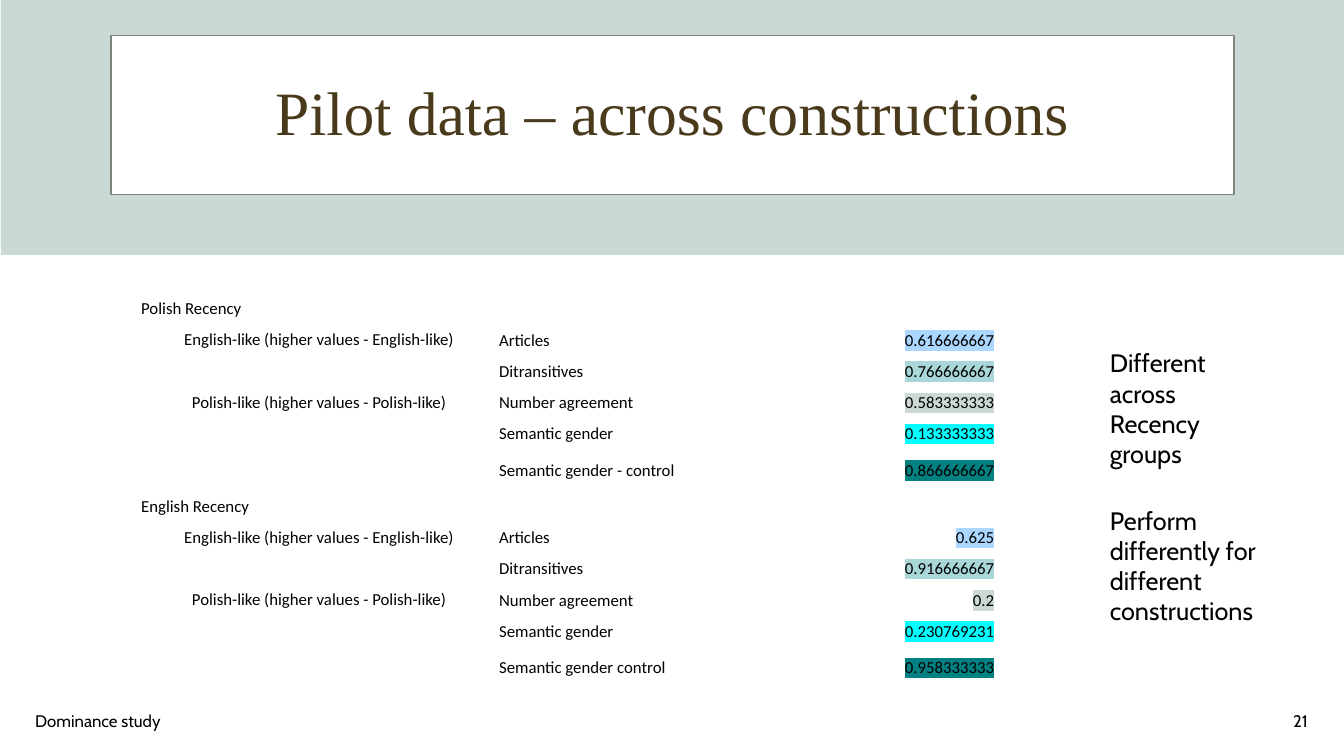
from lxml.etree import SubElement
from pptx import Presentation
from pptx.dml.color import RGBColor
from pptx.enum.shapes import MSO_SHAPE as Shape
from pptx.enum.text import MSO_ANCHOR as Anchor, PP_ALIGN as Align
from pptx.oxml import parse_xml
from pptx.oxml.ns import nsdecls, qn
from pptx.util import Inches, Pt

COLORS = {
    "band": "CAD8D6", "white": "FFFFFF", "frame": "7E8679", "title": "4A3A1C", "text": "000000",
    "articles": "AAD6FF", "ditransitives": "A9D7D9", "number": "CCD8D6",
    "gender": "00FFFF", "control": "008080",
}
HIGHLIGHTS = ["articles", "ditransitives", "number", "gender", "control"]
CONSTRUCTIONS = ["Articles", "Ditransitives", "Number agreement", "Semantic gender"]
LABELS = {
    1: "English-like (higher values - English-like)",
    3: "Polish-like (higher values - Polish-like)",
}
GROUPS = [
    ("Polish Recency", "Semantic gender - control",
     ["0.616666667", "0.766666667", "0.583333333", "0.133333333", "0.866666667"]),
    ("English Recency", "Semantic gender control",
     ["0.625", "0.916666667", "0.2", "0.230769231", "0.958333333"]),
]
COLUMN_WIDTHS = [3.55, 3.18, 1.75]
ROW_HEIGHTS = [0.36, 0.31, 0.31, 0.31, 0.31, 0.36]


class SlideBuilder:
    """Draws styled elements on one slide."""

    def __init__(self, slide):
        self.slide = slide
        self.body_font = "Cabin"
        self.table_font = "Calibri"
        self.title_font = "Times New Roman"

    def color(self, name):
        return RGBColor.from_string(COLORS[name])

    def rectangle(self, left, top, width, height, fill, line=None):
        shape = self.slide.shapes.add_shape(
            Shape.RECTANGLE, Inches(left), Inches(top), Inches(width), Inches(height))
        shape.shadow.inherit = False
        shape.fill.solid()
        shape.fill.fore_color.rgb = self.color(fill)
        if line:
            shape.line.color.rgb = self.color(line)
            shape.line.width = Pt(1)
        else:
            shape.line.fill.background()

    def run(self, paragraph, text, size, font, color="text", highlight=None):
        run = paragraph.add_run()
        run.text = text
        run.font.size = Pt(size)
        run.font.name = font
        run.font.color.rgb = self.color(color)
        if highlight:
            fill = run.font._element.find(qn("a:solidFill"))
            fill.addnext(parse_xml(
                f'<a:highlight {nsdecls("a")}><a:srgbClr val="{COLORS[highlight]}"/></a:highlight>'))

    def text(self, left, top, width, height, text, size, font=None, color="text",
             align=Align.LEFT, anchor=Anchor.TOP, line_spacing=None):
        box = self.slide.shapes.add_textbox(
            Inches(left), Inches(top), Inches(width), Inches(height))
        frame = box.text_frame
        frame.word_wrap = True
        frame.vertical_anchor = anchor
        paragraph = frame.paragraphs[0]
        paragraph.alignment = align
        paragraph.line_spacing = line_spacing
        self.run(paragraph, text, size, font or self.body_font, color)

    def cell(self, cell, text, align=Align.LEFT, highlight=None):
        cell.vertical_anchor = Anchor.BOTTOM
        cell.margin_left = cell.margin_top = cell.margin_right = Inches(0.01)
        cell.margin_bottom = Inches(0.05)
        paragraph = cell.text_frame.paragraphs[0]
        paragraph.alignment = align
        if text:
            self.run(paragraph, text, 12, self.table_font, highlight=highlight)
        else:
            SubElement(paragraph._p, qn("a:endParaRPr"), sz="1200")

    def label(self, table, row, text):
        cell = table.cell(row, 0)
        cell.merge(table.cell(row + 1, 0))
        self.cell(cell, text, Align.CENTER)
        cell.vertical_anchor = Anchor.TOP
        cell.margin_left = cell.margin_right = Inches(0.1)
        cell.margin_top = Inches(0.05)

    def results_table(self, left, top):
        heights = ROW_HEIGHTS * len(GROUPS)
        table = self.slide.shapes.add_table(
            len(heights), len(COLUMN_WIDTHS), Inches(left), Inches(top),
            Inches(sum(COLUMN_WIDTHS)), Inches(sum(heights))).table
        table.first_row = table.horz_banding = False
        for column, width in zip(table.columns, COLUMN_WIDTHS):
            column.width = Inches(width)
        for row, height in zip(table.rows, heights):
            row.height = Inches(height)
        for cell in table.iter_cells():
            cell.fill.background()
        for index, (group, control, values) in enumerate(GROUPS):
            first = index * len(ROW_HEIGHTS)
            names = ["", *CONSTRUCTIONS, control]
            highlights = [None, *HIGHLIGHTS]
            for offset, (name, value) in enumerate(zip(names, ["", *values])):
                row = first + offset
                if offset in LABELS:
                    self.label(table, row, LABELS[offset])
                else:
                    self.cell(table.cell(row, 0), "" if offset else group)
                self.cell(table.cell(row, 1), name)
                self.cell(table.cell(row, 2), value, Align.RIGHT, highlights[offset])


def main():
    presentation = Presentation()
    presentation.slide_width = Inches(13.33)
    presentation.slide_height = Inches(7.5)
    builder = SlideBuilder(presentation.slides.add_slide(presentation.slide_layouts[6]))

    builder.rectangle(0.01, 0, 13.32, 2.53, "band")
    builder.rectangle(1.1, 0.35, 11.14, 1.58, "white", "frame")
    builder.text(0.42, 0.42, 12.5, 1.45, "Pilot data – across constructions", 44,
                 builder.title_font, "title", Align.CENTER, Anchor.MIDDLE, 0.9)
    builder.text(0.25, 6.95, 4.5, 0.4, "Dominance study", 12, anchor=Anchor.MIDDLE)
    builder.text(10.07, 6.95, 3, 0.4, "21", 12, align=Align.RIGHT, anchor=Anchor.MIDDLE)
    builder.results_table(1.39, 2.86)
    builder.text(10.91, 3.4, 1.8, 1.31, "Different across Recency groups", 18)
    builder.text(10.91, 4.96, 1.8, 1.31, "Perform differently for different constructions", 18)

    presentation.save("out.pptx")


if __name__ == "__main__":
    main()
